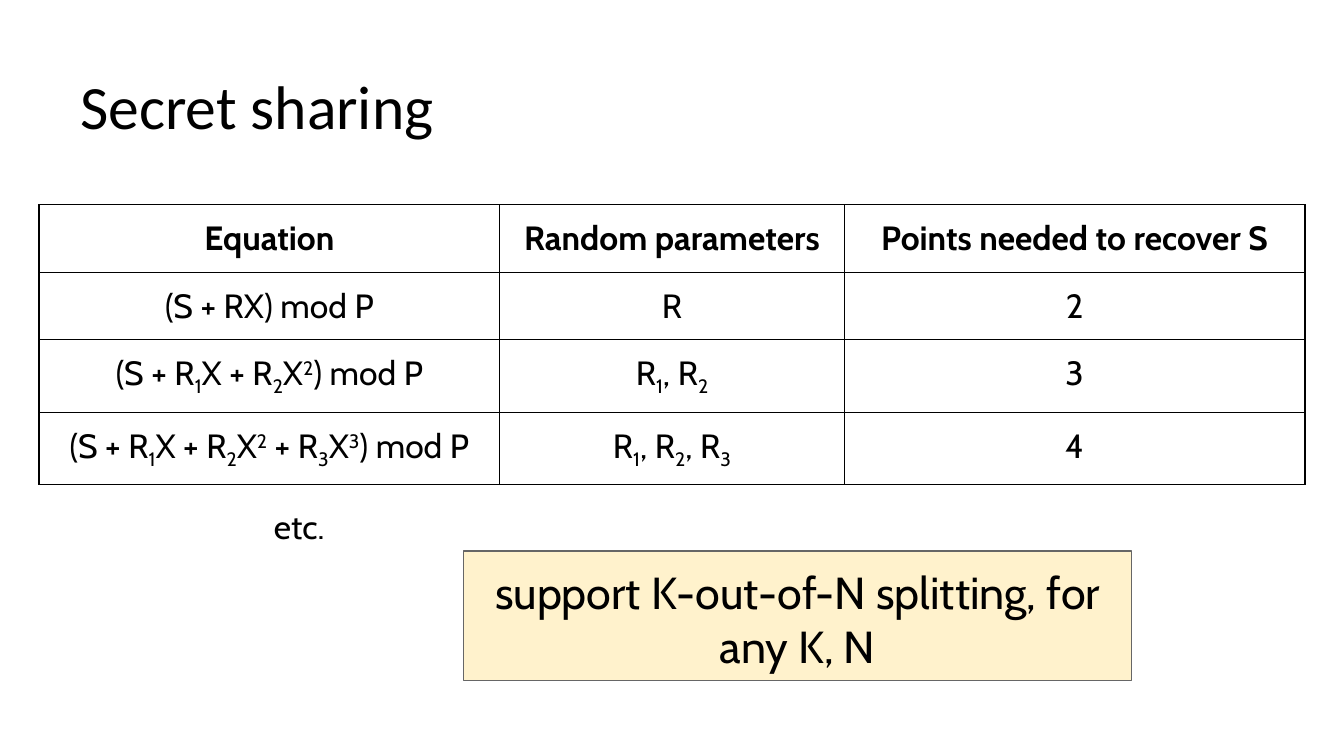
from lxml import etree
from pptx import Presentation
from pptx.dml.color import RGBColor
from pptx.enum.shapes import MSO_SHAPE
from pptx.enum.text import MSO_ANCHOR, PP_ALIGN
from pptx.oxml.ns import qn
from pptx.util import Inches, Pt

RECTANGLE = MSO_SHAPE.RECTANGLE
TOP, BOTTOM = MSO_ANCHOR.TOP, MSO_ANCHOR.BOTTOM
LEFT, CENTER = PP_ALIGN.LEFT, PP_ALIGN.CENTER

WIDTH = 10
HEIGHT = WIDTH * 9 / 16
INSET = Inches(0.1)
BODY_FONT, TITLE_FONT = "Cabin", "Calibri"
COLORS = {"ink": "000000", "paper": "FFFFFF", "note": "FFF2CC", "note_edge": "666666"}
BASELINES = {"_": "-25000", "^": "30000"}
COLUMN_SHARES = (0.364, 0.272, 0.364)
EQUATIONS = (
    ("Equation", "Random parameters", "Points needed to recover S"),
    ("(S + RX) mod P", "R", "2"),
    ("(S + R_1X + R_2X^2) mod P", "R_1, R_2", "3"),
    ("(S + R_1X + R_2X^2 + R_3X^3) mod P", "R_1, R_2, R_3", "4"),
)


def color(name):
    """Return the palette colour with this name."""
    return RGBColor.from_string(COLORS[name])


def split_scripts(text):
    """Split text into (piece, mark) pairs; a mark raises or lowers one character."""
    pieces, mark = [("", "")], ""
    for letter in text:
        if letter in BASELINES:
            mark = letter
        elif mark or pieces[-1][1]:
            pieces.append((letter, mark))
            mark = ""
        else:
            pieces[-1] = (pieces[-1][0] + letter, "")
    return pieces


def write(frame, text, size, font=BODY_FONT, align=LEFT, bold=False):
    """Fill a text frame with one styled paragraph."""
    paragraph = frame.paragraphs[0]
    paragraph.alignment = align
    for piece, mark in split_scripts(text):
        run = paragraph.add_run()
        run.text = piece
        run.font.name, run.font.size, run.font.bold = font, Pt(size), bold
        run.font.color.rgb = color("ink")
        if mark:
            run.font._element.set("baseline", BASELINES[mark])
    return paragraph


def set_frame(frame, anchor):
    """Give a text frame wrapping, equal insets and an anchor."""
    frame.word_wrap = True
    frame.margin_left = frame.margin_right = INSET
    frame.margin_top = frame.margin_bottom = INSET
    frame.vertical_anchor = anchor


def add_label(slide, box, text, size, font=BODY_FONT, anchor=TOP):
    """Add a plain text label in the box."""
    frame = slide.shapes.add_textbox(*map(Inches, box)).text_frame
    set_frame(frame, anchor)
    return write(frame, text, size, font)


def add_borders(cell):
    """Draw a thin line on all four sides of a cell."""
    properties = cell._tc.get_or_add_tcPr()
    for side in ("a:lnL", "a:lnR", "a:lnT", "a:lnB"):
        line = etree.SubElement(properties, qn(side), w=str(Pt(0.75)))
        fill = etree.SubElement(line, qn("a:solidFill"))
        etree.SubElement(fill, qn("a:srgbClr"), val=COLORS["ink"])


def add_equation_table(slide, box):
    """Add the table of sharing equations in the box."""
    left, top, width, height = box
    rows, columns = len(EQUATIONS), len(COLUMN_SHARES)
    table = slide.shapes.add_table(rows, columns, *map(Inches, box)).table
    table.first_row = table.horz_banding = False
    for column, share in zip(table.columns, COLUMN_SHARES):
        column.width = Inches(width * share)
    for index, entries in enumerate(EQUATIONS):
        table.rows[index].height = Inches(height / rows)
        for cell, entry in zip(table.rows[index].cells, entries):
            cell.margin_left = cell.margin_right = INSET
            cell.margin_top = cell.margin_bottom = INSET
            add_borders(cell)
            cell.fill.solid()
            cell.fill.fore_color.rgb = color("paper")
            write(cell.text_frame, entry, 18, align=CENTER, bold=index == 0)


def add_takeaway(slide, box, text):
    """Add the highlighted conclusion in the box."""
    panel = slide.shapes.add_shape(RECTANGLE, *map(Inches, box))
    panel.shadow.inherit = False
    panel.fill.solid()
    panel.fill.fore_color.rgb = color("note")
    panel.line.color.rgb = color("note_edge")
    panel.line.width = Pt(0.75)
    set_frame(panel.text_frame, TOP)
    write(panel.text_frame, text, 24, align=CENTER)


def build_slide(slide, width, height):
    """Place the title, table, continuation and conclusion on the slide."""
    title_box = (0.05 * width, 0.04 * height, 0.9 * width, 0.167 * height)
    title = add_label(slide, title_box, "Secret sharing", 33, TITLE_FONT, BOTTOM)
    title.line_spacing = 0.9
    margin = 0.029 * width
    add_equation_table(slide, (margin, 0.271 * height, width - 2 * margin, 0.356 * height))
    add_label(slide, (0.194 * width, 0.651 * height, 0.082 * width, 0.09 * height), "etc.", 18)
    takeaway_box = (0.345 * width, 0.729 * height, 0.497 * width, 0.171 * height)
    add_takeaway(slide, takeaway_box, "support K-out-of-N splitting, for any K, N")


def main():
    """Build and save the presentation."""
    deck = Presentation()
    deck.slide_width, deck.slide_height = Inches(WIDTH), Inches(HEIGHT)
    build_slide(deck.slides.add_slide(deck.slide_layouts[6]), WIDTH, HEIGHT)
    deck.save("out.pptx")


if __name__ == "__main__":
    main()
